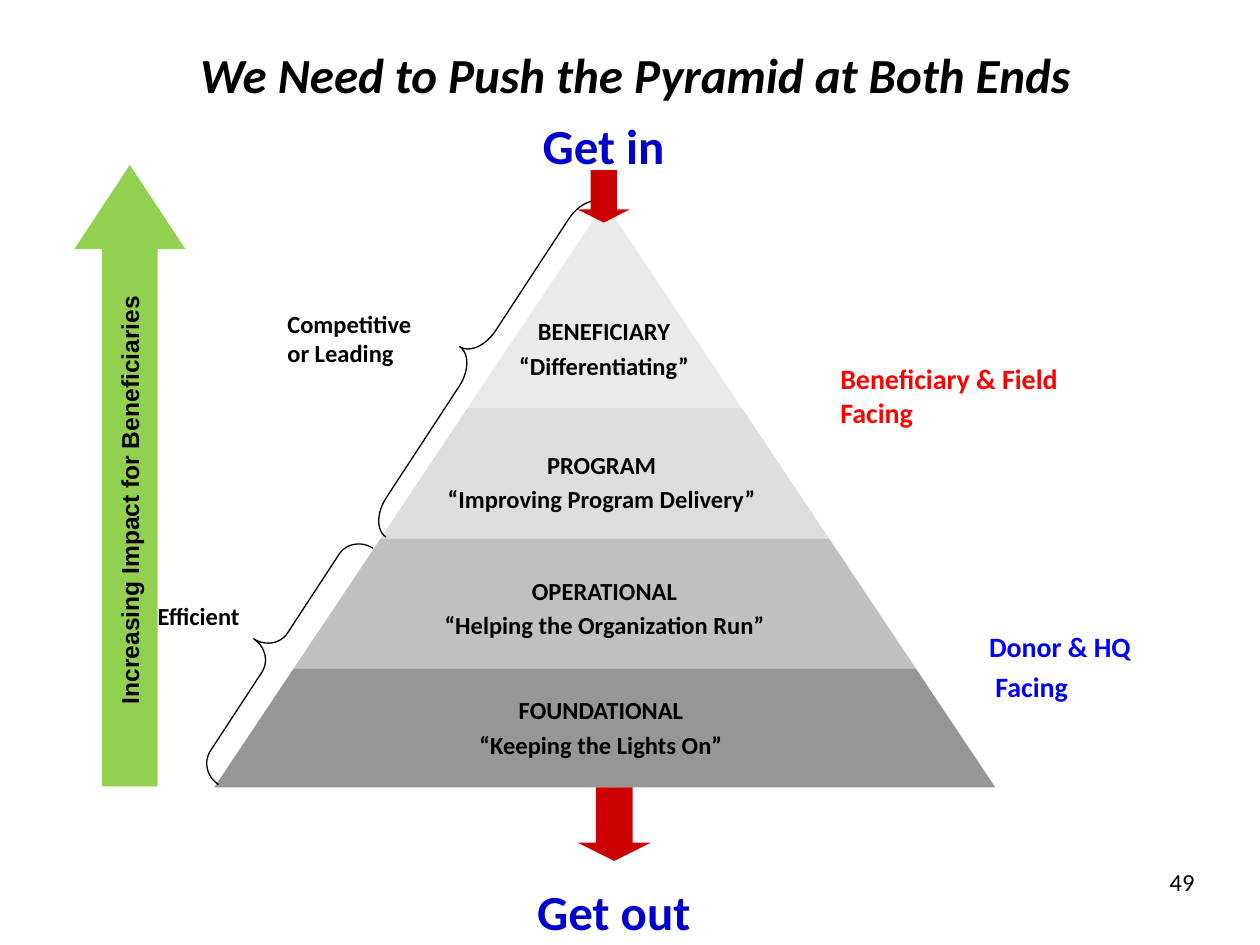
from dataclasses import dataclass
from itertools import pairwise
from typing import Optional

from pptx import Presentation
from pptx.dml.color import RGBColor
from pptx.enum.shapes import MSO_SHAPE as Preset
from pptx.enum.text import MSO_ANCHOR as Anchor, PP_ALIGN as Align
from pptx.slide import Slide
from pptx.util import Pt

BLACK = RGBColor(0x00, 0x00, 0x00)
RED = RGBColor(0xFF, 0x00, 0x00)
DARK_RED = RGBColor(0xCC, 0x00, 0x00)
BLUE = RGBColor(0x00, 0x00, 0xFF)
DARK_BLUE = RGBColor(0x00, 0x00, 0xCC)
GREEN = RGBColor(0x92, 0xD0, 0x50)
BAND_GREYS = (
    RGBColor(0xEA, 0xEA, 0xEA),
    RGBColor(0xDD, 0xDD, 0xDD),
    RGBColor(0xC0, 0xC0, 0xC0),
    RGBColor(0x96, 0x96, 0x96),
)

PYRAMID_CENTER = 345.6
PYRAMID_HALF_BASE = 223.2
BAND_EDGES = (115.9, 233.3, 307.8, 382.3, 450)


@dataclass(frozen=True)
class Label:
    lines: tuple[str, ...]
    left: float
    top: float
    width: float
    height: float
    size: float = 14
    color: RGBColor = BLACK
    align: Align = Align.LEFT
    font: str = "Calibri"
    bold: bool = True
    italic: bool = False
    rotation: float = 0
    anchor: Anchor = Anchor.TOP


@dataclass(frozen=True)
class Figure:
    preset: Preset
    left: float
    top: float
    width: float
    height: float
    adjustments: tuple[float, float]
    fill: Optional[RGBColor] = None
    rotation: float = 0


FIGURES = (
    Figure(Preset.LEFT_BRACE, 260.6, 90.7, 24.5, 228.2, (0.776, 0.5), rotation=33.2),
    Figure(Preset.LEFT_BRACE, 142.6, 292.3, 28.8, 161.3, (0.466, 0.5), rotation=33.2),
    Figure(Preset.DOWN_ARROW, 330, 97.2, 30, 30, (0.5, 0.25), DARK_RED),
    Figure(Preset.DOWN_ARROW, 330, 450, 42, 42, (0.5, 0.25), DARK_RED),
    Figure(Preset.UP_ARROW, 42.5, 94.3, 63.4, 355, (0.501, 0.757), GREEN),
)

LABELS = (
    Label(("We Need to Push the Pyramid at Both Ends",), 0, 6, 726, 72, 28,
          align=Align.CENTER, italic=True, anchor=Anchor.MIDDLE),
    Label(("BENEFICIARY", "“Differentiating”"), 239, 180.7, 212.4, 37.4,
          align=Align.CENTER),
    Label(("PROGRAM", "“Improving Program Delivery”"), 237.6, 257, 212.4, 37.4,
          align=Align.CENTER),
    Label(("OPERATIONAL", "“Helping the Organization Run”"), 239, 329, 213, 37.4,
          align=Align.CENTER),
    Label(("FOUNDATIONAL", "“Keeping the Lights On”"), 262, 397.4, 162.8, 37.4,
          align=Align.CENTER),
    Label(("Efficient",), 90, 343.4, 54, 17.3),
    Label(("Competitive\vor Leading",), 164.2, 176.4, 95.8, 33.8),
    Label(("Donor & HQ", " Facing"), 565.2, 360, 107.3, 42.5, 16, BLUE),
    Label(("Beneficiary & Field Facing",), 480.2, 206.6, 137.5, 38.9, 16, RED),
    Label(("Get in",), 288, 66.2, 113.8, 33.8, 28, DARK_BLUE, Align.CENTER),
    Label(("Get out",), 293.8, 504, 113.8, 33.8, 28, DARK_BLUE, Align.CENTER),
    Label(("49",), 601.2, 495.4, 81.4, 30, align=Align.RIGHT, bold=False),
    Label(("Increasing Impact for Beneficiaries",), -49, 270.7, 246.2, 17.3,
          font="Arial", rotation=270),
)


def draw_band(slide: Slide, top: float, bottom: float, color: RGBColor) -> None:
    """Draw the slice of the pyramid between two heights."""
    slope = PYRAMID_HALF_BASE / (BAND_EDGES[-1] - BAND_EDGES[0])
    upper, lower = ((y - BAND_EDGES[0]) * slope for y in (top, bottom))
    corners = [(PYRAMID_CENTER - lower, bottom), (PYRAMID_CENTER + lower, bottom)]
    if upper:
        corners.append((PYRAMID_CENTER + upper, top))
    corners.append((PYRAMID_CENTER - upper, top))
    points = [(Pt(x), Pt(y)) for x, y in corners]
    builder = slide.shapes.build_freeform(*points[0])
    builder.add_line_segments(points[1:], close=True)
    band = builder.convert_to_shape()
    band.shadow.inherit = False
    band.fill.solid()
    band.fill.fore_color.rgb = color
    band.line.fill.background()


def draw_figure(slide: Slide, figure: Figure) -> None:
    shape = slide.shapes.add_shape(
        figure.preset, Pt(figure.left), Pt(figure.top), Pt(figure.width), Pt(figure.height)
    )
    shape.shadow.inherit = False
    shape.rotation = figure.rotation
    for index, value in enumerate(figure.adjustments):
        shape.adjustments[index] = value
    if figure.fill is None:
        shape.fill.background()
        shape.line.color.rgb = BLACK
        shape.line.width = Pt(0.75)
    else:
        shape.fill.solid()
        shape.fill.fore_color.rgb = figure.fill
        shape.line.fill.background()


def draw_label(slide: Slide, label: Label) -> None:
    box = slide.shapes.add_textbox(
        Pt(label.left), Pt(label.top), Pt(label.width), Pt(label.height)
    )
    box.rotation = label.rotation
    frame = box.text_frame
    frame.word_wrap = True
    frame.vertical_anchor = label.anchor
    frame.margin_left = frame.margin_right = frame.margin_top = frame.margin_bottom = 0
    frame.text = "\n".join(label.lines)
    for index, paragraph in enumerate(frame.paragraphs):
        paragraph.alignment = label.align
        paragraph.space_before = Pt(0.2 * label.size if index else 0)
        font = paragraph.font
        font.name = label.font
        font.size = Pt(label.size)
        font.bold = label.bold
        font.italic = label.italic
        font.color.rgb = label.color


def main() -> None:
    presentation = Presentation()
    presentation.slide_width, presentation.slide_height = Pt(720), Pt(540)
    slide = presentation.slides.add_slide(presentation.slide_layouts[6])
    for (top, bottom), grey in zip(pairwise(BAND_EDGES), BAND_GREYS):
        draw_band(slide, top, bottom, grey)
    for figure in FIGURES:
        draw_figure(slide, figure)
    for label in LABELS:
        draw_label(slide, label)
    presentation.save("out.pptx")


if __name__ == "__main__":
    main()
